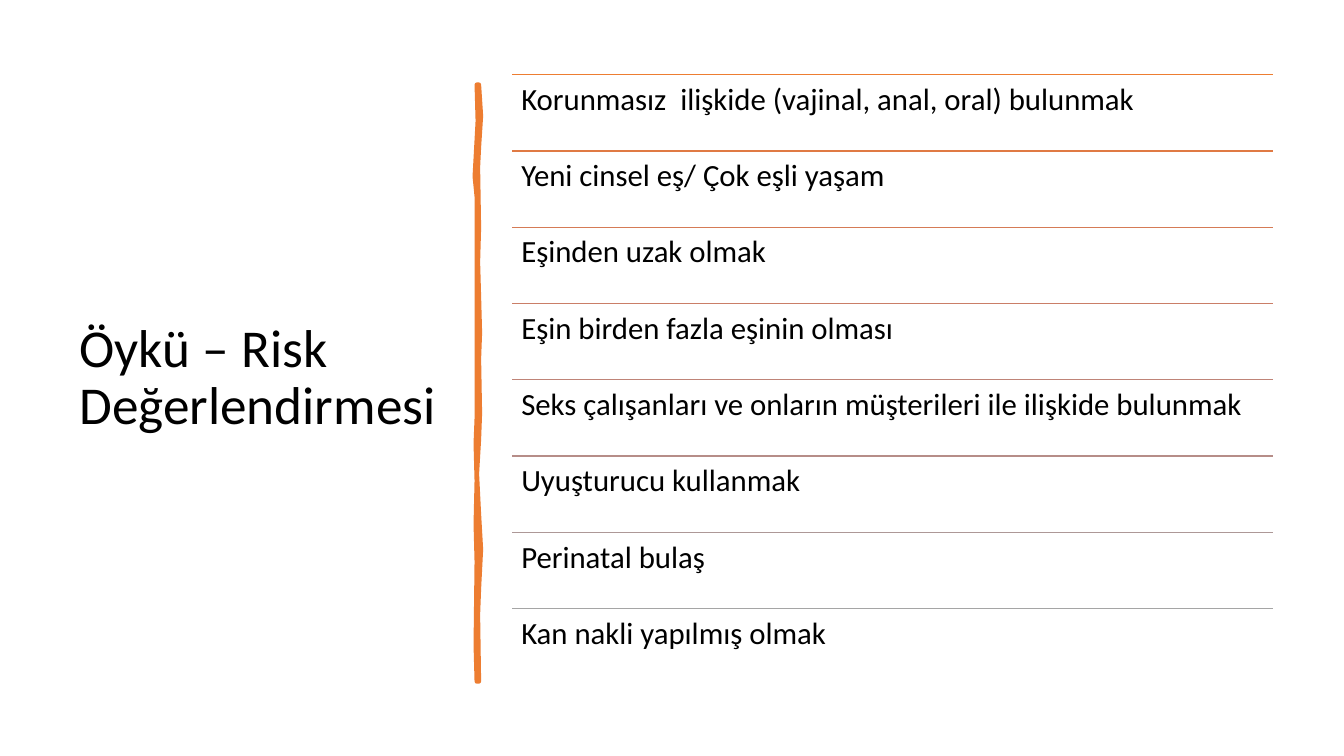
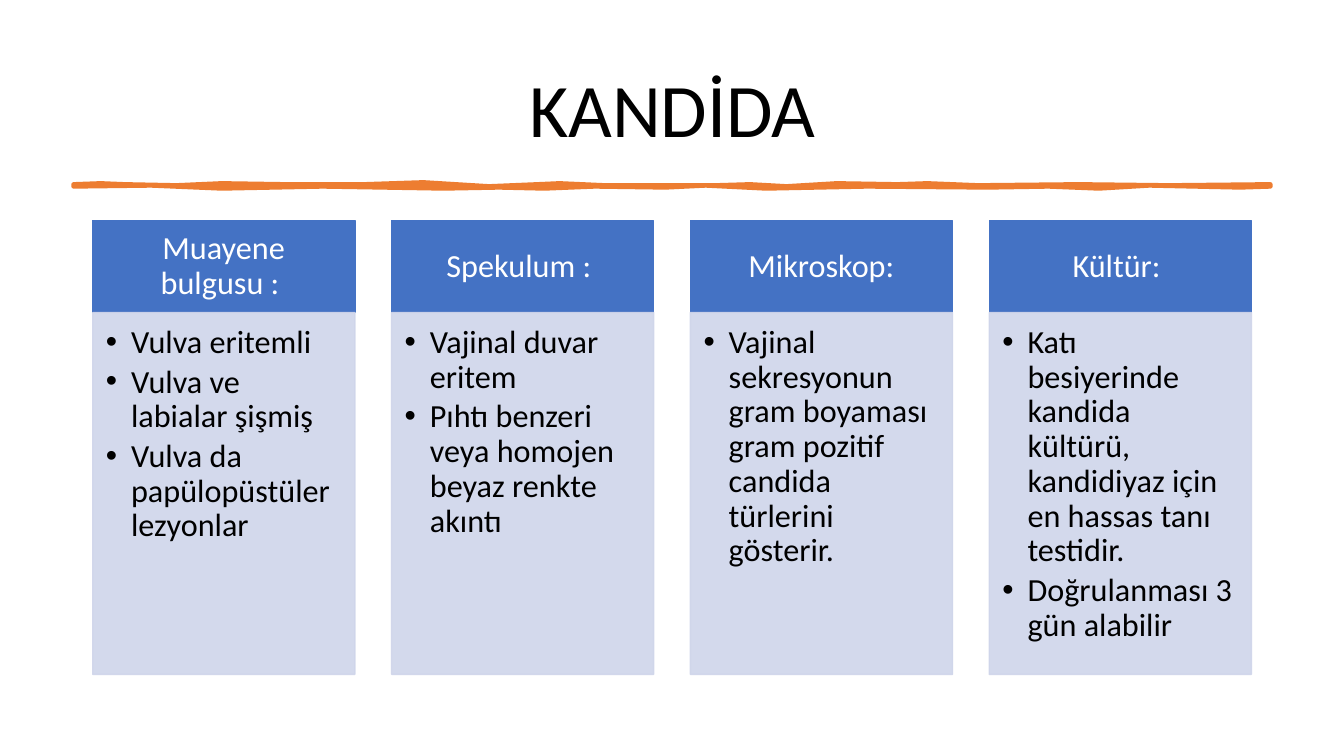
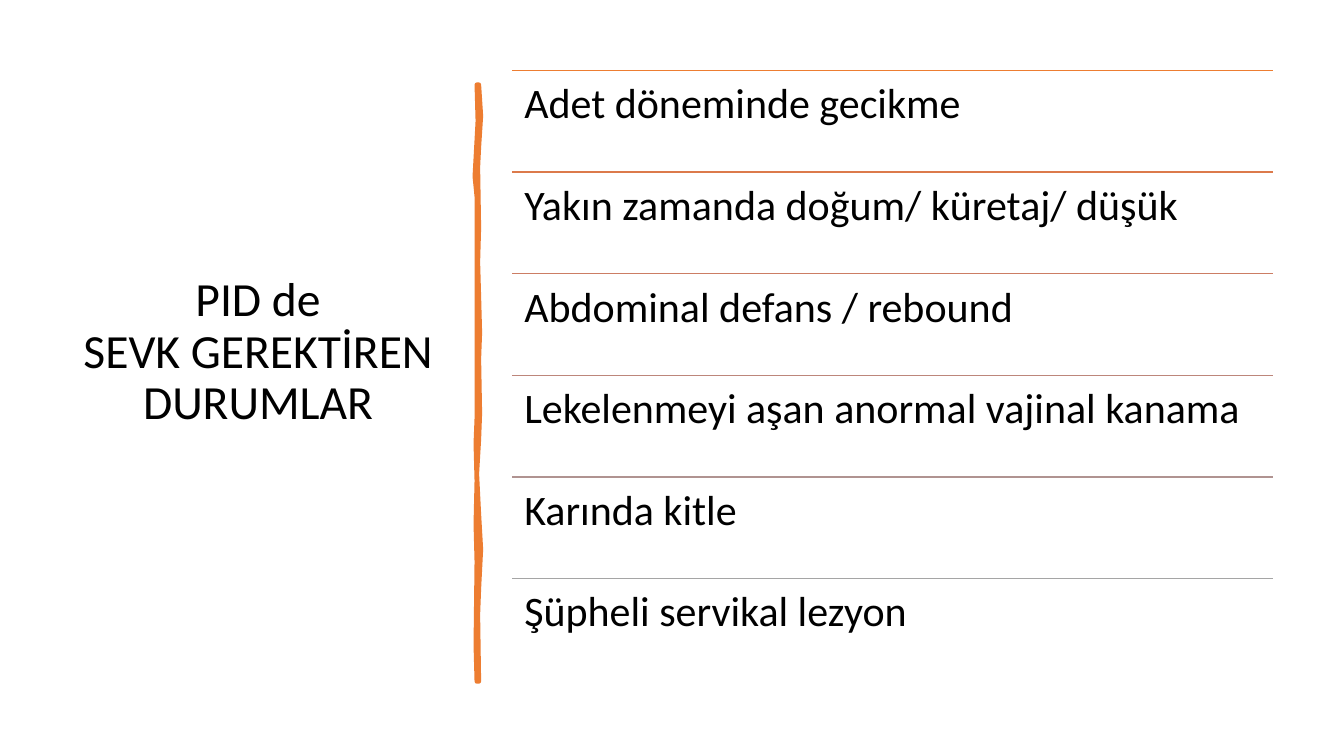
from colorsys import hls_to_rgb, rgb_to_hls
from dataclasses import dataclass

from lxml.etree import SubElement
from pptx import Presentation
from pptx.dml.color import RGBColor
from pptx.enum.shapes import MSO_CONNECTOR, MSO_SHAPE
from pptx.enum.text import MSO_ANCHOR, PP_ALIGN
from pptx.oxml.ns import qn
from pptx.util import Inches, Pt

FONT = "Calibri"
COLORS = {
    "text": "000000",
    "header_text": "FFFFFF",
    "accent": "ED7D31",
    "last_rule": "A5A5A5",
    "header": "4472C4",
    "card": "CFD5EA",
}
SIDE_STROKE = [
    (4.75, 0.84), (4.77, 1.15), (4.75, 1.46), (4.74, 1.66), (4.75, 2.26),
    (4.74, 2.6), (4.75, 2.94), (4.76, 3.3), (4.75, 3.56), (4.76, 4.1),
    (4.75, 4.36), (4.73, 4.7), (4.75, 5.1), (4.77, 5.45), (4.75, 5.84),
    (4.74, 6.1), (4.75, 6.76), (4.73, 6.76), (4.72, 6.4), (4.73, 5.57),
    (4.72, 5.2), (4.73, 4.77), (4.72, 4.4), (4.73, 4.15), (4.73, 2.5),
    (4.73, 1.95), (4.71, 1.75), (4.74, 1.2), (4.73, 0.84),
]
TITLE_STROKE = [
    (0.73, 1.83), (1.0, 1.82), (1.24, 1.83), (1.75, 1.84), (2.2, 1.82),
    (2.84, 1.83), (3.61, 1.83), (4.2, 1.81), (4.85, 1.85), (5.33, 1.83),
    (5.55, 1.82), (6.0, 1.84), (7.1, 1.84), (7.44, 1.83), (7.8, 1.85),
    (8.3, 1.82), (8.9, 1.83), (9.2, 1.82), (9.7, 1.84), (10.7, 1.83),
    (11.6, 1.84), (12.6, 1.83), (12.6, 1.85), (12.3, 1.86), (11.4, 1.84),
    (10.9, 1.87), (10.4, 1.85), (9.8, 1.86), (8.6, 1.85), (7.6, 1.87),
    (7.0, 1.84), (6.6, 1.86), (5.9, 1.85), (5.4, 1.87), (4.95, 1.86),
    (4.4, 1.87), (3.8, 1.86), (3.2, 1.85), (2.2, 1.87), (1.5, 1.84),
    (0.73, 1.85),
]


@dataclass
class RuledList:
    title: str
    title_size: float
    title_height: float
    title_align: PP_ALIGN
    top: float
    pitch: float
    size: float
    inset: float
    rows: list[str]


@dataclass
class Card:
    header: str
    points: list[str]


RISKS = RuledList(
    "Öykü – Risk Değerlendirmesi", 38, 6.11, PP_ALIGN.LEFT, 0.74, 0.757, 22, 0.09,
    [
        "Korunmasız  ilişkide (vajinal, anal, oral) bulunmak",
        "Yeni cinsel eş/ Çok eşli yaşam",
        "Eşinden uzak olmak",
        "Eşin birden fazla eşinin olması",
        "Seks çalışanları ve onların müşterileri ile ilişkide bulunmak",
        "Uyuşturucu kullanmak",
        "Perinatal bulaş",
        "Kan nakli yapılmış olmak",
    ],
)
REFERRALS = RuledList(
    "PID de\vSEVK GEREKTİREN DURUMLAR", 34, 5.6, PP_ALIGN.CENTER, 0.7, 1.008, 30, 0.12,
    [
        "Adet döneminde gecikme",
        "Yakın zamanda doğum/ küretaj/ düşük",
        "Abdominal defans / rebound",
        "Lekelenmeyi aşan anormal vajinal kanama",
        "Karında kitle",
        "Şüpheli servikal lezyon",
    ],
)
CARDS = [
    Card("Muayene bulgusu : ", [
        "Vulva eritemli",
        "Vulva ve labialar şişmiş",
        "Vulva da papülopüstüler lezyonlar",
    ]),
    Card("Spekulum : ", [
        "Vajinal duvar eritem",
        "Pıhtı benzeri veya homojen beyaz renkte akıntı",
    ]),
    Card("Mikroskop:", [
        "Vajinal sekresyonun gram boyaması gram pozitif candida türlerini gösterir.",
    ]),
    Card("Kültür: ", [
        "Katı besiyerinde kandida kültürü, kandidiyaz için en hassas tanı testidir.",
        "Doğrulanması 3 gün alabilir",
    ]),
]


def rgb(color: str) -> RGBColor:
    return RGBColor.from_string(color)


def blend(start: str, end: str, share: float) -> str:
    first, last = (rgb_to_hls(*(part / 255 for part in rgb(color))) for color in (start, end))
    mixed = hls_to_rgb(*(a + (b - a) * share for a, b in zip(first, last)))
    return "".join(f"{round(part * 255):02X}" for part in mixed)


def write_text(shape, *lines: str, size: float, color: str = COLORS["text"],
               align: PP_ALIGN = PP_ALIGN.LEFT, anchor: MSO_ANCHOR = MSO_ANCHOR.TOP,
               insets: tuple = (0.1, 0.05, 0.1, 0.05), bullet: bool = False,
               space_after: float = 0) -> None:
    frame = shape.text_frame
    frame.word_wrap = True
    frame.vertical_anchor = anchor
    frame.margin_left, frame.margin_top, frame.margin_right, frame.margin_bottom = map(Inches, insets)
    for index, line in enumerate(lines):
        paragraph = frame.paragraphs[0] if index == 0 else frame.add_paragraph()
        paragraph.text = line
        paragraph.alignment = align
        paragraph.line_spacing = 0.9
        paragraph.space_after = Pt(space_after)
        if bullet:
            properties = paragraph._p.get_or_add_pPr()
            properties.set("marL", str(Inches(0.25)))
            properties.set("indent", str(-Inches(0.25)))
            SubElement(properties, qn("a:buFont"), typeface="Arial")
            SubElement(properties, qn("a:buChar"), char="•")
        for run in paragraph.runs:
            run.font.name = FONT
            run.font.size = Pt(size)
            run.font.color.rgb = rgb(color)


def add_text(slide, left: float, top: float, width: float, height: float, text: str, **style) -> None:
    write_text(slide.shapes.add_textbox(*map(Inches, (left, top, width, height))), text, **style)


def paint(shape, color: str, line_width: float, opacity: int = 100) -> None:
    shape.shadow.inherit = False
    shape.fill.solid()
    shape.fill.fore_color.rgb = rgb(color)
    shape.line.color.rgb = rgb(color)
    shape.line.width = Pt(line_width)
    if opacity < 100:
        for element in shape._element.spPr.iter(qn("a:srgbClr")):
            SubElement(element, qn("a:alpha"), val=str(opacity * 1000))


def add_panel(slide, left: float, top: float, width: float, height: float,
              color: str, opacity: int = 100):
    panel = slide.shapes.add_shape(MSO_SHAPE.RECTANGLE, *map(Inches, (left, top, width, height)))
    paint(panel, color, 1, opacity)
    return panel


def add_rule(slide, left: float, right: float, top: float, color: str) -> None:
    rule = slide.shapes.add_connector(MSO_CONNECTOR.STRAIGHT, *map(Inches, (left, top, right, top)))
    rule.line.color.rgb = rgb(color)
    rule.line.width = Pt(1)
    SubElement(rule._element.spPr, qn("a:effectLst"))


def add_stroke(slide, outline: list[tuple[float, float]]) -> None:
    points = [(Inches(x), Inches(y)) for x, y in outline]
    builder = slide.shapes.build_freeform(*points[0], scale=1.0)
    builder.add_line_segments(points[1:], close=True)
    paint(builder.convert_to_shape(), COLORS["accent"], 3.25)


def add_slide(presentation):
    return presentation.slides.add_slide(presentation.slide_layouts[6])


def build_ruled_list(presentation, content: RuledList) -> None:
    slide = add_slide(presentation)
    add_text(slide, 0.69, 0.7, 3.74, content.title_height, content.title,
             size=content.title_size, align=content.title_align, anchor=MSO_ANCHOR.MIDDLE)
    add_stroke(slide, SIDE_STROKE)
    left, width = 5.08, 7.55
    for index, row in enumerate(content.rows):
        top = content.top + index * content.pitch
        share = index / (len(content.rows) - 1)
        add_rule(slide, left, left + width, top, blend(COLORS["accent"], COLORS["last_rule"], share))
        add_text(slide, left, top, width, content.pitch, row,
                 size=content.size, insets=(content.inset,) * 4)


def build_cards(presentation, title: str, cards: list[Card]) -> None:
    slide = add_slide(presentation)
    add_text(slide, 0.92, 0.4, 11.5, 1.45, title,
             size=54, align=PP_ALIGN.CENTER, anchor=MSO_ANCHOR.MIDDLE)
    add_stroke(slide, TITLE_STROKE)
    width, top, header_height = 2.6, 2.19, 0.91
    for index, card in enumerate(cards):
        left = 0.92 + index * width * 1.14
        header = add_panel(slide, left, top, width, header_height, COLORS["header"])
        write_text(header, card.header, size=23, color=COLORS["header_text"], align=PP_ALIGN.CENTER,
                   anchor=MSO_ANCHOR.MIDDLE, insets=(0.18, 0.1, 0.18, 0.1))
        body = add_panel(slide, left, top + header_height, width, 3.59, COLORS["card"], 90)
        write_text(body, *card.points, size=23, insets=(0.13, 0.13, 0.18, 0.2),
                   bullet=True, space_after=3.5)


def main() -> None:
    presentation = Presentation()
    presentation.slide_width = Inches(13.33)
    presentation.slide_height = Inches(7.5)
    build_ruled_list(presentation, RISKS)
    build_cards(presentation, "KANDİDA", CARDS)
    build_ruled_list(presentation, REFERRALS)
    presentation.save("out.pptx")


if __name__ == "__main__":
    main()
